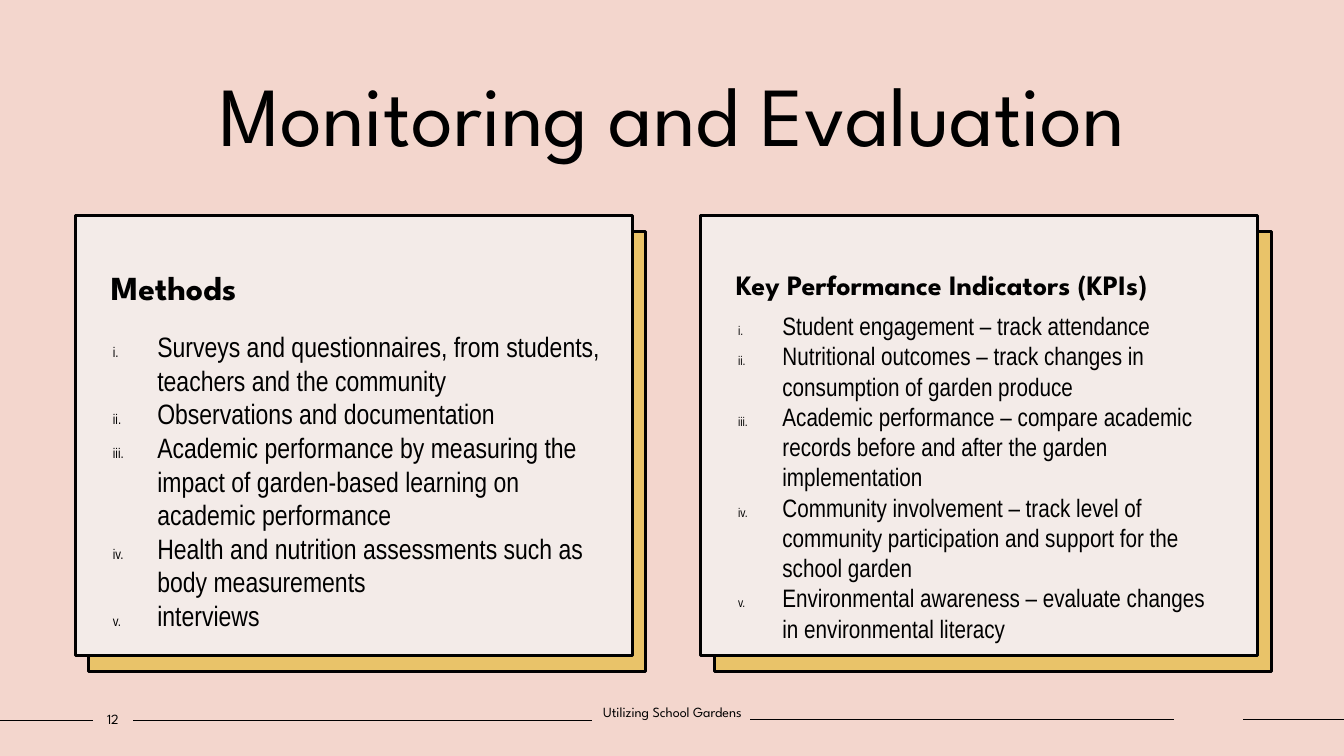
import pptx
import pptx.dml.color
import pptx.enum.shapes
import pptx.enum.text
import pptx.oxml
import pptx.oxml.ns
import pptx.util
from pptx.util import Inches

DISPLAY_FONT = "League Spartan"
LIST_FONT = "Arial Narrow"
INK = "000000"
BLUSH = "F3D6CD"
CREAM = "F3EBE8"
GOLD = "E9C369"
ANCHOR = pptx.enum.text.MSO_ANCHOR
CENTER = pptx.enum.text.PP_ALIGN.CENTER

METHODS = [
    "Surveys and questionnaires, from students, teachers and the community",
    "Observations and documentation",
    "Academic performance by measuring the impact of garden-based learning on academic performance",
    "Health and nutrition assessments such as body measurements",
    "interviews",
]
INDICATORS = [
    "Student engagement – track attendance",
    "Nutritional outcomes – track changes in consumption of garden produce",
    "Academic performance – compare academic records before and after the garden implementation",
    "Community involvement – track level of community participation and support for the school garden",
    "Environmental awareness – evaluate changes in environmental literacy",
]


def color(value):
    return pptx.dml.color.RGBColor.from_string(value)


def place(shape, left, top, width, height):
    shape.left, shape.top = Inches(left), Inches(top)
    shape.width, shape.height = Inches(width), Inches(height)


def paint(shape, fill):
    shape.fill.solid()
    shape.fill.fore_color.rgb = color(fill)
    shape.line.color.rgb = color(INK)
    shape.line.width = pptx.util.Pt(2)


def set_frame(shape, anchor, insets=(0.1, 0.05, 0.1, 0.05)):
    frame = shape.text_frame
    frame.word_wrap = True
    frame.auto_size = pptx.enum.text.MSO_AUTO_SIZE.NONE
    frame.vertical_anchor = anchor
    frame.margin_left, frame.margin_top, frame.margin_right, frame.margin_bottom = map(Inches, insets)
    return frame


def style(para, size, font=DISPLAY_FONT, bold=False):
    for span in para.runs:
        span.font.size = pptx.util.Pt(size)
        span.font.name = font
        span.font.bold = bold
        span.font.color.rgb = color(INK)


def number_item(para):
    props = para._p.get_or_add_pPr()
    props.set("marL", str(Inches(0.44)))
    props.set("indent", str(-Inches(0.44)))
    for tag, name, value in (
        ("buSzPct", "val", "50000"),
        ("buFont", "typeface", LIST_FONT),
        ("buAutoNum", "type", "romanLcPeriod"),
    ):
        bullet = pptx.oxml.parse_xml(f'<a:{tag} {pptx.oxml.ns.nsdecls("a")} {name}="{value}"/>')
        props.append(bullet)


def add_title(page, text, left, top, width, height):
    title = page.shapes.title
    place(title, left, top, width, height)
    frame = set_frame(title, ANCHOR.BOTTOM)
    frame.text = text
    para = frame.paragraphs[0]
    para.alignment = CENTER
    style(para, 60)


def add_card(page, heading, listing, left, top, shade_left, title, title_size, items, item_size, list_top, list_height):
    width, height = 5.52, 4.36
    shade = page.shapes.add_shape(
        pptx.enum.shapes.MSO_SHAPE.RECTANGLE,
        Inches(left + shade_left), Inches(top + 0.16), Inches(width), Inches(height),
    )
    shade.shadow.inherit = False
    paint(shade, GOLD)
    page.shapes._spTree.insert(2, shade._element)

    place(heading, left, top, width, height)
    paint(heading, CREAM)
    frame = set_frame(heading, ANCHOR.TOP, (0.35, 0.55, 0.1, 0.05))
    frame.text = title
    para = frame.paragraphs[0]
    para.line_spacing = 0.9
    para.space_before = pptx.util.Pt(10)
    style(para, title_size, bold=True)

    place(listing, left + 0.27, list_top, 5.04, list_height)
    frame = set_frame(listing, ANCHOR.TOP)
    frame.text = "\n".join(items)
    for para in frame.paragraphs:
        para.line_spacing = 1.0
        para.space_before = pptx.util.Pt(0)
        number_item(para)
        style(para, item_size, LIST_FONT)


def add_label(page, text, left, top, width):
    box = page.shapes.add_textbox(Inches(left), Inches(top), Inches(width), Inches(0.27))
    frame = set_frame(box, ANCHOR.MIDDLE, (0, 0.05, 0, 0.05))
    frame.text = text
    para = frame.paragraphs[0]
    para.alignment = CENTER
    style(para, 10)


def add_footer(page, top):
    for start, end, drop in ((0, 0.92, 0.15), (1.32, 5.87, 0.15), (7.44, 11.64, 0.14), (12.33, 13.33, 0.14)):
        y = Inches(top + drop)
        rule = page.shapes.add_connector(
            pptx.enum.shapes.MSO_CONNECTOR.STRAIGHT, Inches(start), y, Inches(end), y
        )
        rule.line.color.rgb = color(INK)
        rule.line.width = pptx.util.Pt(1)
        rule._element.spPr.append(pptx.oxml.parse_xml(f'<a:effectLst {pptx.oxml.ns.nsdecls("a")}/>'))
    add_label(page, "12", 0.92, top, 0.4)
    add_label(page, "Utilizing School Gardens", 5.87, top - 0.07, 1.6)


def main():
    deck = pptx.Presentation()
    deck.slide_width, deck.slide_height = Inches(13.33), Inches(7.5)
    page = deck.slides.add_slide(deck.slide_layouts.get_by_name("Comparison"))
    page.background.fill.solid()
    page.background.fill.fore_color.rgb = color(BLUSH)
    title, left_heading, left_list, right_heading, right_list = page.placeholders
    add_title(page, "Monitoring and Evaluation", 1.25, 0.56, 10.84, 1.11)
    add_card(page, left_heading, left_list, 0.75, 2.14, 0.13,
             "Methods", 24, METHODS, 20, 3.22, 3.05)
    add_card(page, right_heading, right_list, 6.95, 2.14, 0.14,
             "Key Performance Indicators (KPIs)", 20, INDICATORS, 18, 3.03, 3.47)
    add_footer(page, 7)
    deck.save("out.pptx")


if __name__ == "__main__":
    main()
